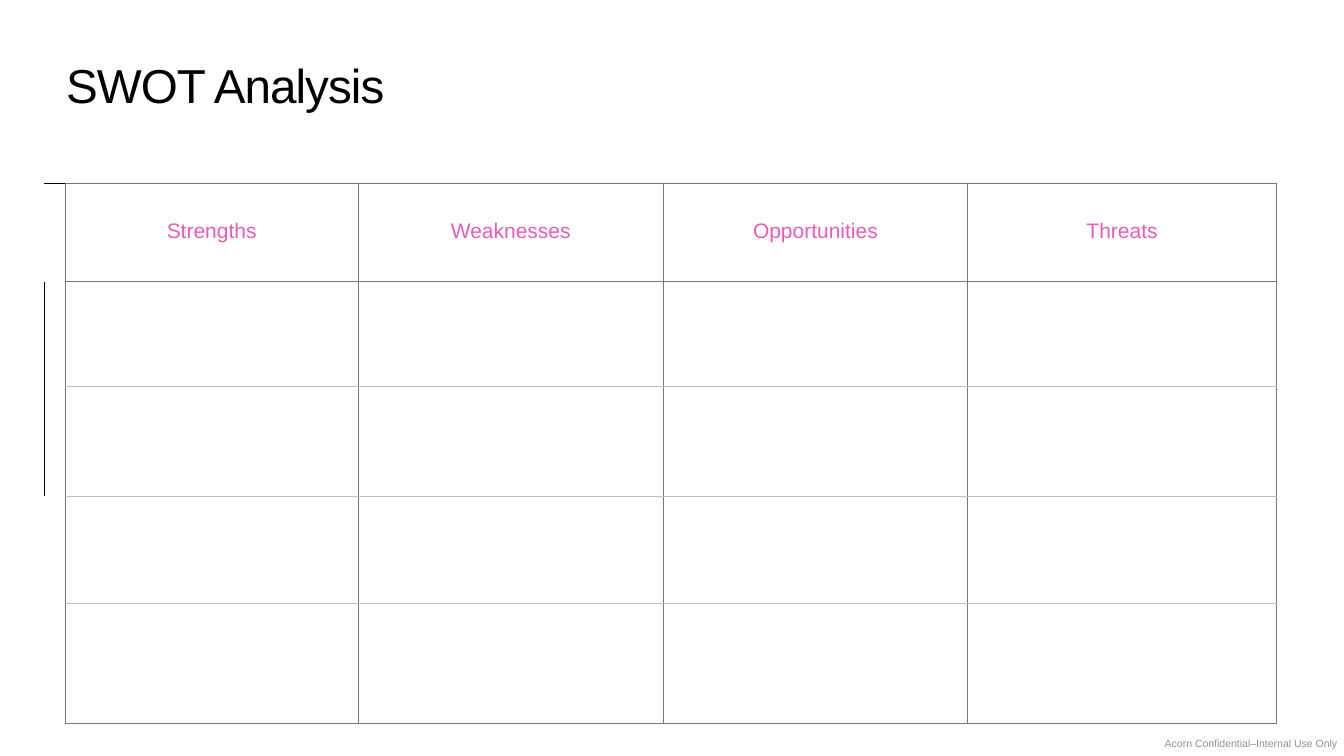
import dataclasses

import lxml.etree
import pptx
import pptx.dml.color
import pptx.enum.text
import pptx.oxml.ns
import pptx.util

Cm = pptx.util.Cm
Pt = pptx.util.Pt
RGB = pptx.dml.color.RGBColor
Align = pptx.enum.text.PP_ALIGN
Anchor = pptx.enum.text.MSO_ANCHOR
qn = pptx.oxml.ns.qn


@dataclasses.dataclass
class Theme:
    font: str = "Arial"
    title_color: str = "000000"
    header_color: str = "E85CBA"
    footer_color: str = "87939D"
    frame: str = "6F7980"
    rule: str = "BEBEBE"
    edge: str = "000000"
    title_size: float = 68
    title_leading: float = 73
    title_tracking: float = -1.4
    header_size: float = 30
    footer_size: float = 15
    border_width: float = 1


class SlideBuilder:
    def __init__(self, slide, theme):
        self.slide = slide
        self.theme = theme

    def run(self, p, text, size, color, tracking=0):
        r = p.add_run()
        r.text = text
        r.font.name = self.theme.font
        r.font.size = Pt(size)
        r.font.color.rgb = RGB.from_string(color)
        if tracking:
            r.font._element.set("spc", str(round(tracking * 100)))

    def text(self, box, text, size, color, align=Align.LEFT, inset=0,
             wrap=True, leading=None, tracking=0):
        sp = self.slide.shapes.add_textbox(*(Cm(v) for v in box))
        tf = sp.text_frame
        tf.word_wrap = wrap
        tf.vertical_anchor = Anchor.BOTTOM
        tf.margin_left = tf.margin_right = Cm(inset)
        tf.margin_top = tf.margin_bottom = Cm(inset)
        p = tf.paragraphs[0]
        p.alignment = align
        if leading:
            p.line_spacing = Pt(leading)
        self.run(p, text, size, color, tracking)

    def borders(self, cell, colors):
        tc_pr = cell._tc.get_or_add_tcPr()
        for side, color in zip("LRTB", colors):
            ln = lxml.etree.SubElement(tc_pr, qn(f"a:ln{side}"))
            ln.set("w", str(Pt(self.theme.border_width)))
            if color:
                fill = lxml.etree.SubElement(ln, qn("a:solidFill"))
                lxml.etree.SubElement(fill, qn("a:srgbClr")).set("val", color)
            else:
                lxml.etree.SubElement(ln, qn("a:noFill"))

    def border_colors(self, row, col, last_row):
        t = self.theme
        if col == 0:
            left = t.edge if row in (1, 2) else None
            top = t.edge if row == 0 else None
            return left, t.frame, top, None
        top = t.frame if row <= 1 else t.rule
        bottom = t.frame if row in (0, last_row) else t.rule
        return t.frame, t.frame, top, bottom

    def table(self, left, top, widths, heights, headers):
        t = self.theme
        frame = self.slide.shapes.add_table(
            len(heights), len(widths), Cm(left), Cm(top),
            Cm(sum(widths)), Cm(sum(heights)))
        table = frame.table
        table.first_row = table.horz_banding = False
        for column, width in zip(table.columns, widths):
            column.width = Cm(width)
        for row, height in zip(table.rows, heights):
            row.height = Cm(height)
        for i in range(len(heights)):
            for j in range(len(widths)):
                cell = table.cell(i, j)
                self.borders(cell, self.border_colors(i, j, len(heights) - 1))
                cell.fill.background()
                cell.vertical_anchor = Anchor.MIDDLE
                cell.margin_left = cell.margin_right = 0
                cell.margin_top = cell.margin_bottom = 0
        for j, header in enumerate(headers, start=1):
            p = table.cell(0, j).text_frame.paragraphs[0]
            p.alignment = Align.CENTER
            p.line_spacing = 0.9
            self.run(p, header, t.header_size, t.header_color)


def main():
    prs = pptx.Presentation()
    prs.slide_width = Cm(67.74)
    prs.slide_height = Cm(38.1)
    theme = Theme()
    s = SlideBuilder(prs.slides.add_slide(prs.slide_layouts[6]), theme)

    s.text((58.7, 37.13, 8.71, 0.64), "Acorn Confidential–Internal Use Only",
           theme.footer_size, theme.footer_color, Align.RIGHT, wrap=False)
    s.table(2.24, 9.25,
            widths=[1.04, 14.78, 15.37, 15.34, 15.57],
            heights=[4.95, 5.26, 5.56, 5.38, 6.07],
            headers=["Strengths", "Weaknesses", "Opportunities", "Threats"])
    s.text((3.18, 1.8, 61.39, 4.04), "SWOT Analysis",
           theme.title_size, theme.title_color, inset=0.15,
           leading=theme.title_leading, tracking=theme.title_tracking)

    prs.save("out.pptx")


if __name__ == "__main__":
    main()
